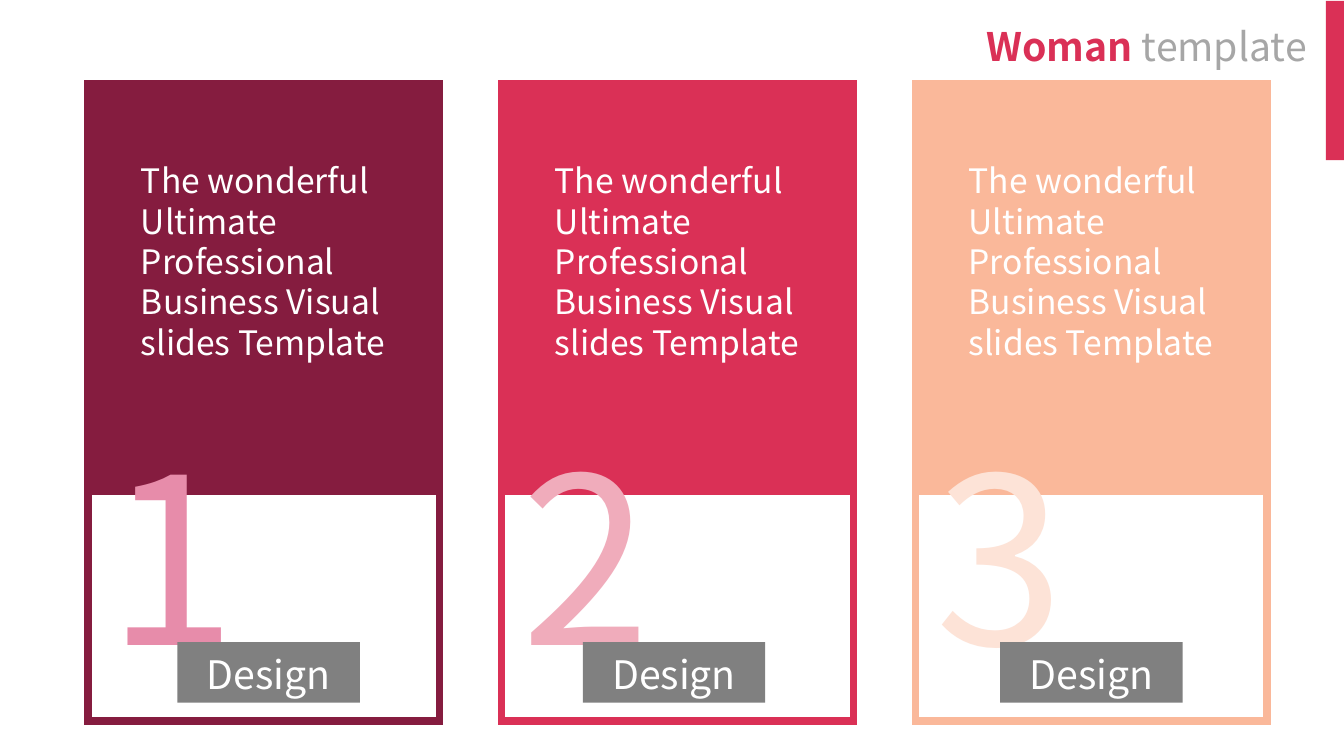
from dataclasses import dataclass

from pptx import Presentation
from pptx.dml.color import RGBColor
from pptx.enum.shapes import MSO_SHAPE
from pptx.enum.text import MSO_ANCHOR, MSO_AUTO_SIZE, PP_ALIGN
from pptx.oxml.ns import qn
from pptx.util import Inches, Pt
from lxml.etree import SubElement

TITLE = ("Woman ", "template")
BODY = "The wonderful Ultimate Professional Business Visual slides Template"
LABEL = "Design"
# number, card colour, number colour, left edge of the label
CARDS = [
    ("1", "851C3F", "E78CAA", 1.76),
    ("2", "DA3056", "F0ACBB", 5.78),
    ("3", "FAB89A", "FDE3D7", 9.92),
]


@dataclass(frozen=True)
class Theme:
    font: str = "Noto Sans CJK JP"
    white: str = "FFFFFF"
    accent: str = "DA3056"
    label: str = "808080"
    muted: str = "A6A6A6"
    body_size: float = 24
    head_size: float = 28
    number_size: float = 166
    border: float = 5.5


THEME = Theme()
CARD_LEFT, CARD_STEP, CARD_W = 0.87, 4.105, 3.49
NUMBER_INSET, BODY_INSET = 0.1, 0.43


def rgb(color):
    return RGBColor.from_string(color)


def box(left, top, width, height):
    return [Inches(v) for v in (left, top, width, height)]


def add_rect(slide, place, fill, line=None):
    """Add a flat rectangle; a given line colour makes a square-cornered border."""
    sp = slide.shapes.add_shape(MSO_SHAPE.RECTANGLE, *box(*place))
    sp.shadow.inherit = False
    sp.fill.solid()
    sp.fill.fore_color.rgb = rgb(fill)
    if line:
        sp.line.color.rgb = rgb(line)
        sp.line.width = Pt(THEME.border)
        ln = sp.element.spPr.find(qn("a:ln"))
        SubElement(ln, qn("a:miter")).set("lim", "800000")
    else:
        sp.line.fill.background()
    return sp


def style(p, size, color, align=PP_ALIGN.LEFT):
    p.alignment = align
    p.font.name = THEME.font
    p.font.size = Pt(size)
    p.font.color.rgb = rgb(color)


def add_text(slide, place, text, size, color, wrap):
    tf = slide.shapes.add_textbox(*box(*place)).text_frame
    tf.word_wrap = wrap
    tf.auto_size = MSO_AUTO_SIZE.SHAPE_TO_FIT_TEXT
    tf.text = text
    style(tf.paragraphs[0], size, color)


def add_label(slide, left):
    tf = add_rect(slide, (left, 6.37, 1.81, 0.6), THEME.label).text_frame
    tf.margin_top = Inches(0.08)
    tf.text = LABEL
    style(tf.paragraphs[0], THEME.head_size, THEME.white, PP_ALIGN.CENTER)


def add_card(slide, left, number, color, number_color, label_left):
    add_rect(slide, (left, 0.83, CARD_W, 4.02), color, color)
    add_rect(slide, (left, 4.87, CARD_W, 2.28), THEME.white, color)
    add_text(slide, (left + NUMBER_INSET, 4.05, 1.65, 2.89), number,
             THEME.number_size, number_color, False)
    add_label(slide, label_left)
    add_text(slide, (left + BODY_INSET, 1.54, 2.64, 2.52), BODY,
             THEME.body_size, THEME.white, True)


def set_title(slide):
    title = slide.shapes.title
    title.left, title.top, title.width, title.height = box(9.47, 0.17, 3.59, 0.57)
    tf = title.text_frame
    tf.word_wrap = False
    tf.auto_size = MSO_AUTO_SIZE.SHAPE_TO_FIT_TEXT
    tf.vertical_anchor = MSO_ANCHOR.TOP
    p = tf.paragraphs[0]
    style(p, THEME.head_size, THEME.muted, PP_ALIGN.RIGHT)
    strong, plain = [p.add_run() for _ in TITLE]
    strong.text, plain.text = TITLE
    strong.font.bold = True
    strong.font.color.rgb = rgb(THEME.accent)


def main():
    prs = Presentation()
    prs.slide_width, prs.slide_height = Inches(13.33), Inches(7.5)
    slide = prs.slides.add_slide(prs.slide_layouts[5])
    set_title(slide)
    for i, card in enumerate(CARDS):
        add_card(slide, CARD_LEFT + i * CARD_STEP, *card)
    add_rect(slide, (13.15, 0.01, 0.18, 1.58), THEME.accent)
    prs.save("out.pptx")


if __name__ == "__main__":
    main()
